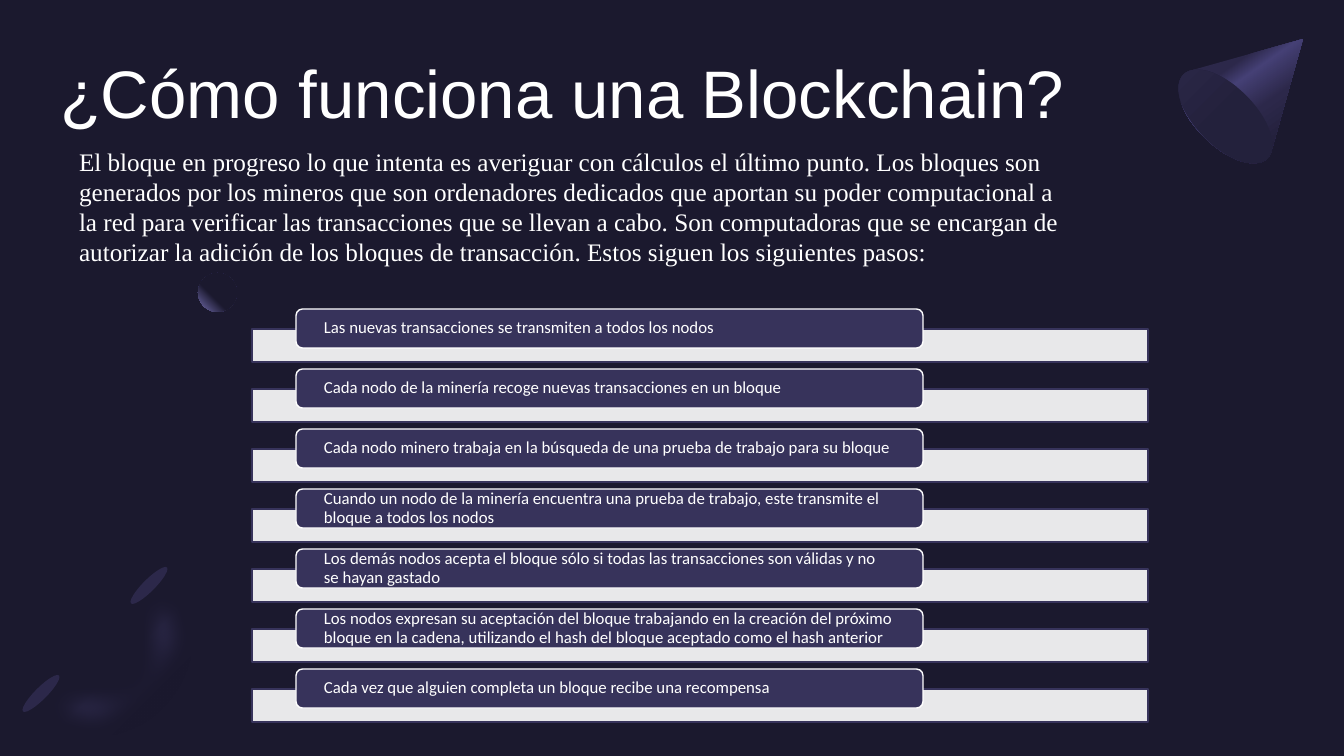
from lxml import etree
from pptx import Presentation
from pptx.dml.color import RGBColor
from pptx.enum.shapes import MSO_SHAPE
from pptx.enum.text import MSO_ANCHOR, PP_ALIGN
from pptx.oxml.ns import qn
from pptx.util import Pt

RECTANGLE = MSO_SHAPE.RECTANGLE
ROUNDED = MSO_SHAPE.ROUNDED_RECTANGLE
ELLIPSE = MSO_SHAPE.OVAL
MIDDLE, TOP = MSO_ANCHOR.MIDDLE, MSO_ANCHOR.TOP
LEFT = PP_ALIGN.LEFT

PX_PER_INCH = 100.8
NIGHT, DUSK, VIOLET = "1B192E", "2C284A", "37335B"
LILAC, WHITE = "7771B2", "FFFFFF"

TITLE = "¿Cómo funciona una Blockchain?"
INTRO = [
    "El bloque en progreso lo que intenta es averiguar con cálculos el último punto. Los bloques son",
    "generados por los mineros que son ordenadores dedicados que aportan su poder computacional a",
    "la red para verificar las transacciones que se llevan a cabo. Son computadoras que se encargan de",
    "autorizar la adición de los bloques de transacción. Estos siguen los siguientes pasos:",
]
STEPS = [
    "Las nuevas transacciones se transmiten a todos los nodos",
    "Cada nodo de la minería recoge nuevas transacciones en un bloque",
    "Cada nodo minero trabaja en la búsqueda de una prueba de trabajo para su bloque",
    "Cuando un nodo de la minería encuentra una prueba de trabajo, este transmite el bloque a todos los nodos",
    "Los demás nodos acepta el bloque sólo si todas las transacciones son válidas y no se hayan gastado",
    "Los nodos expresan su aceptación del bloque trabajando en la creación del próximo bloque en la cadena, "
    "utilizando el hash del bloque aceptado como el hash anterior",
    "Cada vez que alguien completa un bloque recibe una recompensa",
]
STEP_TOP, STEP_PITCH = 309, 60

# Outlines: a pair is a corner, three pairs are a cubic curve
RING = [
    (168, 713), [(209, 672), (203, 602), (155, 555)], (120, 592),
    [(143, 615), (146, 650), (126, 670)], [(106, 691), (71, 688), (47, 663)],
    (11, 700), [(58, 747), (129, 753), (168, 713)],
]
CONE = [
    (1303, 39), (1271, 153), [(1270, 155), (1269, 157), (1268, 158)],
    [(1256, 170), (1228, 161), (1205, 138)], [(1181, 115), (1172, 87), (1183, 75)],
    (1189, 71),
]


def px(value):
    return round(value * 914400 / PX_PER_INCH)


def color(hex_text):
    return RGBColor.from_string(hex_text)


def add_child(parent, tag, **attributes):
    return etree.SubElement(parent, qn(tag), attributes)


def set_gradient(shape, stops, angle=None):
    """Fill along an angle, or outwards from the top right if there is none."""
    shape.fill.gradient()
    gradient = shape.fill._xPr.find(qn("a:gradFill"))
    for child in list(gradient):
        gradient.remove(child)
    stop_list = add_child(gradient, "a:gsLst")
    for percent, hex_text in stops:
        stop = add_child(stop_list, "a:gs", pos=str(percent * 1000))
        add_child(stop, "a:srgbClr", val=hex_text)
    if angle is None:
        focus = add_child(gradient, "a:path")
        focus.set("path", "circle")
        add_child(focus, "a:fillToRect", l="100000", b="100000")
    else:
        add_child(gradient, "a:lin", ang=str(angle * 60000), scaled="0")


def add_figure(page, kind, box, fill=None, line=None, rotation=0):
    shape = page.shapes.add_shape(kind, *map(px, box))
    shape.shadow.inherit = False
    shape.rotation = rotation
    if fill:
        shape.fill.solid()
        shape.fill.fore_color.rgb = color(fill)
    if line:
        shape.line.color.rgb = color(line)
        shape.line.width = Pt(1)
    else:
        shape.line.fill.background()
    return shape


def flatten(outline, pieces=12):
    points = [outline[0]]
    for item in outline[1:]:
        if isinstance(item, tuple):
            points.append(item)
            continue
        curve = [points[-1], *item]
        for number in range(1, pieces + 1):
            t = number / pieces
            weights = ((1 - t) ** 3, 3 * t * (1 - t) ** 2, 3 * t * t * (1 - t), t ** 3)
            points.append(tuple(sum(w * p[axis] for w, p in zip(weights, curve)) for axis in (0, 1)))
    return [(px(x), px(y)) for x, y in points]


def add_outline(page, outline, stops, angle):
    start, *others = flatten(outline)
    builder = page.shapes.build_freeform(*start)
    builder.add_line_segments(others, close=True)
    shape = builder.convert_to_shape()
    shape.shadow.inherit = False
    shape.line.fill.background()
    set_gradient(shape, stops, angle)
    return shape


def write(shape, lines, size, font, insets, anchor=TOP, spacing=1.0):
    frame = shape.text_frame
    frame.word_wrap = True
    frame.vertical_anchor = anchor
    frame.margin_left = frame.margin_right = px(insets[0])
    frame.margin_top = frame.margin_bottom = px(insets[1])
    frame.text = "\n".join(lines)
    for para in frame.paragraphs:
        para.alignment = LEFT
        para.line_spacing = spacing
        for span in para.runs:
            span.font.size = Pt(size)
            span.font.name = font
            span.font.color.rgb = color(WHITE)


def add_text(page, box, lines, size, font, insets, spacing=1.0):
    text_box = page.shapes.add_textbox(*map(px, box))
    write(text_box, lines, size, font, insets, spacing=spacing)


def add_decorations(page):
    # Soft ring and two discs
    ring = add_outline(page, RING, [(38, NIGHT), (60, VIOLET), (76, NIGHT)], 45)
    effects = ring._element.spPr.find(qn("a:effectLst"))
    add_child(effects, "a:softEdge", rad=str(px(20)))
    for left, top in ((143, 560), (35, 668)):
        add_figure(page, ELLIPSE, (left, top, 12, 51), DUSK, rotation=45)

    # Cone and its base
    add_outline(page, CONE, [(30, DUSK), (40, "454075"), (60, DUSK), (100, NIGHT)], 55)
    base = add_figure(page, ELLIPSE, (1196, 57, 59, 119), rotation=135)
    set_gradient(base, [(50, "23213C"), (100, DUSK)], 90)

    # Small sphere
    sphere = add_figure(page, ELLIPSE, (198, 273, 39, 39))
    set_gradient(sphere, [(0, NIGHT), (60, NIGHT), (100, LILAC)])


def add_step(page, top, text):
    bar = add_figure(page, RECTANGLE, (252, top + 20, 896, 33), WHITE, VIOLET)
    bar_color = bar.fill._xPr.find(qn("a:solidFill"))[0]
    add_child(bar_color, "a:alpha", val="90000")
    card = add_figure(page, ROUNDED, (296, top, 627, 39), VIOLET, WHITE)
    write(card, [text], 12, "Calibri", (26, 0), MIDDLE, 0.9)


def main():
    deck = Presentation()
    deck.slide_width, deck.slide_height = px(1344), px(756)
    page = deck.slides.add_slide(deck.slide_layouts[6])
    page.background.fill.solid()
    page.background.fill.fore_color.rgb = color(NIGHT)

    add_decorations(page)
    add_text(page, (60, 60, 1224, 147), [TITLE], 48, "Arial", (0, 0), 0.9)
    add_text(page, (69, 141, 1206, 132), INTRO, 18, "Times New Roman", (10, 5))
    for index, step in enumerate(STEPS):
        add_step(page, STEP_TOP + index * STEP_PITCH, step)
    deck.save("out.pptx")


if __name__ == "__main__":
    main()
